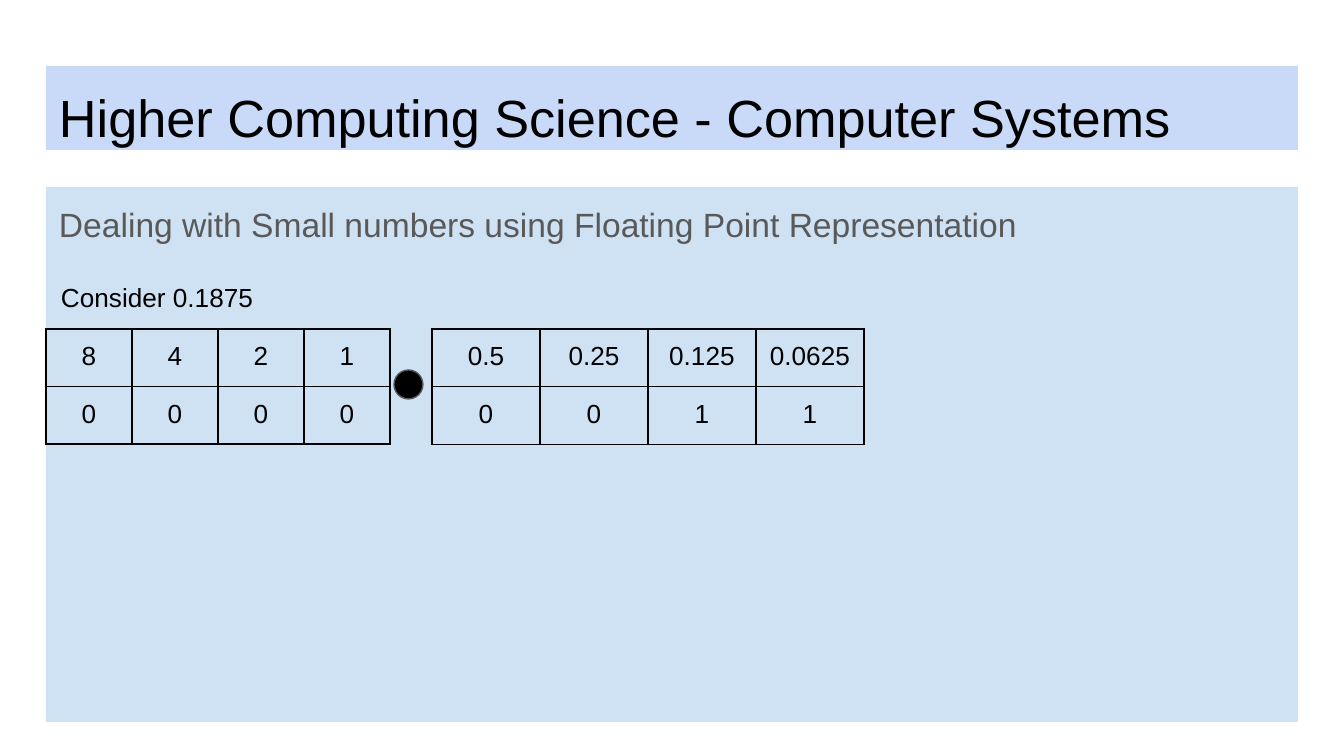
from dataclasses import dataclass

from lxml.etree import SubElement
from pptx import Presentation
from pptx.dml.color import RGBColor
from pptx.enum.shapes import MSO_SHAPE
from pptx.enum.text import MSO_ANCHOR, PP_ALIGN
from pptx.oxml.ns import qn
from pptx.util import Emu, Pt

PX_PER_INCH = 134.4
PAD = 13


@dataclass(frozen=True)
class Theme:
    font: str = "Arial"
    ink: str = "000000"
    muted: str = "595959"
    title_fill: str = "C9DAF8"
    body_fill: str = "CFE2F3"
    title_size: int = 28
    body_size: int = 18
    label_size: int = 14
    border_width: int = 1
    dot_line: float = 0.75


@dataclass(frozen=True)
class Block:
    text: str
    left: int
    top: int
    width: int
    height: int
    pad_top: int
    size: int
    color: str
    fill: str = ""


@dataclass(frozen=True)
class PlaceTable:
    left: int
    col_width: int
    row_heights: tuple[int, ...]
    rows: tuple[tuple[str, ...], ...]


THEME = Theme()
TABLE_TOP = 329

BLOCKS = (
    Block("Higher Computing Science - Computer Systems", 46, 66, 1252, 84, 19,
          THEME.title_size, THEME.ink, THEME.title_fill),
    Block("Dealing with Small numbers using Floating Point Representation",
          46, 187, 1252, 535, 17, THEME.body_size, THEME.muted, THEME.body_fill),
    Block("Consider 0.1875", 48, 265, 634, 46, 16, THEME.label_size, THEME.ink),
)

TABLES = (
    PlaceTable(46, 86, (56, 56), (("8", "4", "2", "1"), ("0", "0", "0", "0"))),
    PlaceTable(432, 108, (56, 58),
               (("0.5", "0.25", "0.125", "0.0625"), ("0", "0", "1", "1"))),
)


def px(n: int) -> Emu:
    return Emu(round(n * 914400 / PX_PER_INCH))


def rgb(color: str) -> RGBColor:
    return RGBColor.from_string(color)


def style(p, size: int, color: str, align=PP_ALIGN.LEFT) -> None:
    p.alignment = align
    p.font.name = THEME.font
    p.font.size = Pt(size)
    p.font.color.rgb = rgb(color)


def add_block(s, block: Block) -> None:
    box = tuple(px(n) for n in (block.left, block.top, block.width, block.height))
    if block.fill:
        sp = s.shapes.add_shape(MSO_SHAPE.RECTANGLE, *box)
        sp.shadow.inherit = False
        sp.fill.solid()
        sp.fill.fore_color.rgb = rgb(block.fill)
        sp.line.fill.background()
    else:
        sp = s.shapes.add_textbox(*box)
    tf = sp.text_frame
    tf.word_wrap = True
    tf.vertical_anchor = MSO_ANCHOR.TOP
    tf.margin_left = tf.margin_right = px(PAD)
    tf.margin_top, tf.margin_bottom = px(block.pad_top), 0
    p = tf.paragraphs[0]
    p.text = block.text
    style(p, block.size, block.color)


def add_borders(cell) -> None:
    tc_pr = cell._tc.get_or_add_tcPr()
    # Border lines come before the fill in a cell's properties
    for i, side in enumerate(("lnL", "lnR", "lnT", "lnB")):
        ln = SubElement(tc_pr, qn(f"a:{side}"), w=str(Pt(THEME.border_width)))
        fill = SubElement(ln, qn("a:solidFill"))
        SubElement(fill, qn("a:srgbClr"), val=THEME.ink)
        tc_pr.insert(i, ln)


def add_place_table(s, spec_table: PlaceTable) -> None:
    n_rows, n_cols = len(spec_table.rows), len(spec_table.rows[0])
    table = s.shapes.add_table(
        n_rows, n_cols, px(spec_table.left), px(TABLE_TOP),
        px(n_cols * spec_table.col_width), px(sum(spec_table.row_heights))).table
    table.first_row = table.horz_banding = False
    for col in table.columns:
        col.width = px(spec_table.col_width)
    for r, values in enumerate(spec_table.rows):
        table.rows[r].height = px(spec_table.row_heights[r])
        for c, value in enumerate(values):
            cell = table.cell(r, c)
            cell.fill.background()
            cell.margin_left = cell.margin_right = px(PAD)
            cell.margin_top = cell.margin_bottom = px(PAD)
            p = cell.text_frame.paragraphs[0]
            p.text = value
            style(p, THEME.label_size, THEME.ink, PP_ALIGN.CENTER)
            add_borders(cell)


def add_point(s, left: int, top: int, size: int) -> None:
    sp = s.shapes.add_shape(MSO_SHAPE.OVAL, px(left), px(top), px(size), px(size))
    sp.shadow.inherit = False
    sp.fill.solid()
    sp.fill.fore_color.rgb = rgb(THEME.ink)
    sp.line.color.rgb = rgb(THEME.muted)
    sp.line.width = Pt(THEME.dot_line)


def main() -> None:
    prs = Presentation()
    prs.slide_width, prs.slide_height = px(1344), px(756)
    s = prs.slides.add_slide(prs.slide_layouts[6])

    # Title, body panel and label
    for block in BLOCKS:
        add_block(s, block)

    # Whole and fractional place values, with the binary point between
    for table in TABLES:
        add_place_table(s, table)
    add_point(s, 394, 370, 29)

    prs.save("out.pptx")


if __name__ == "__main__":
    main()
